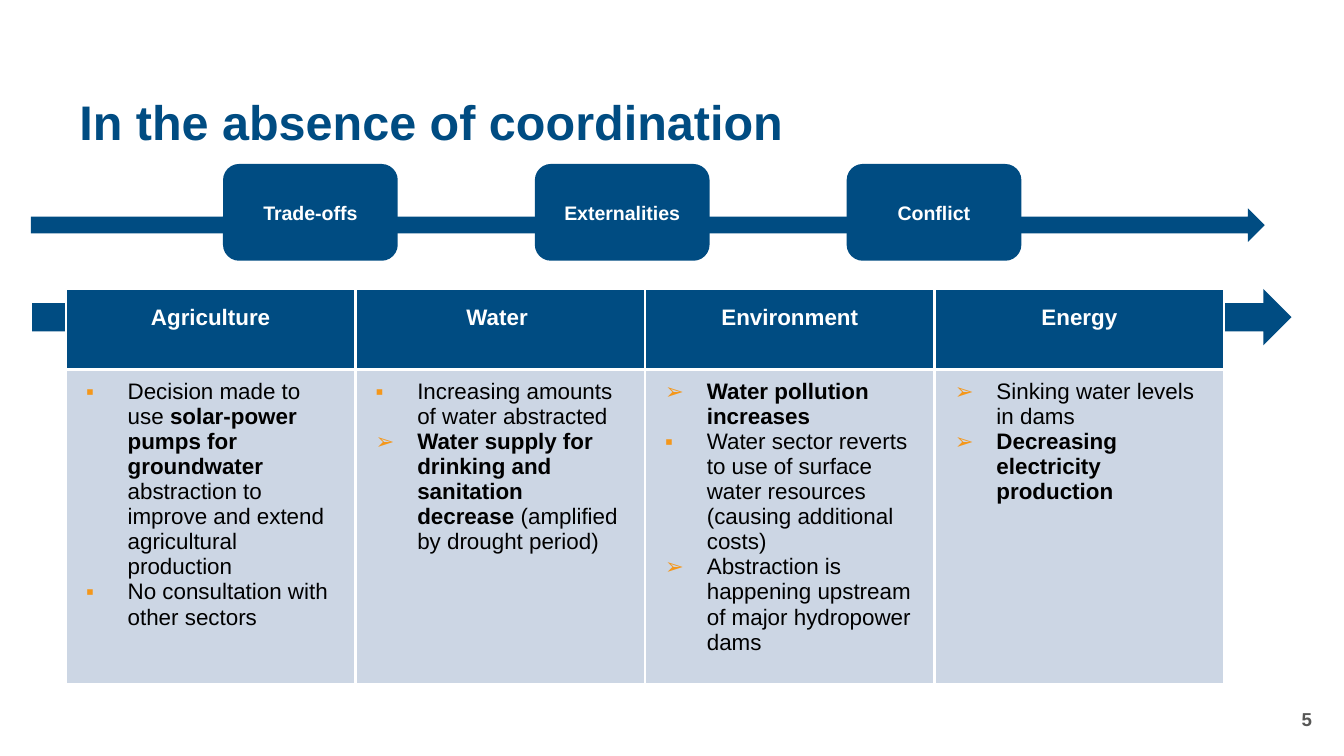
from pptx import Presentation
from pptx.dml.color import RGBColor
from pptx.enum.shapes import MSO_SHAPE
from pptx.enum.text import MSO_ANCHOR, PP_ALIGN
from pptx.oxml import parse_xml
from pptx.oxml.ns import nsdecls
from pptx.util import Inches, Pt

ARROW, ROUND = MSO_SHAPE.RIGHT_ARROW, MSO_SHAPE.ROUNDED_RECTANGLE
MIDDLE = MSO_ANCHOR.MIDDLE
LEFT, CENTER, RIGHT = PP_ALIGN.LEFT, PP_ALIGN.CENTER, PP_ALIGN.RIGHT

COLORS = {"navy": "004C82", "pale": "CCD6E4", "gold": "F4971A",
          "white": "FFFFFF", "black": "000000", "gray": "575756"}
WIDTH = 10
HEIGHT = WIDTH * 9 / 16
TABLE_X, TABLE_Y, TABLE_W = 0.49, 2.15, 8.62
ROWS = (0.6, 2.25)
STEP_X, STEP_GAP = 1.66, 2.32

STEPS = ("Trade-offs", "Externalities", "Conflict")
ARROWS = ((0.23, 1.55, 9.18, 0.25), (0.24, 2.15, 9.37, 0.42))
# Each item is a bullet and its text; ** switches bold on and off.
SECTORS = {
    "Agriculture": (
        ("▪", "Decision made to use **solar-power pumps for groundwater **"
              "abstraction to improve and extend agricultural production"),
        ("▪", "No consultation with other sectors")),
    "Water ": (
        ("▪", "Increasing amounts of water abstracted"),
        ("➢", "**Water supply for drinking and sanitation decrease **"
              "(amplified by drought period)")),
    "Environment": (
        ("➢", "**Water pollution increases**"),
        ("▪", "Water sector reverts to use of surface water resources "
              "(causing additional costs)"),
        ("➢", "Abstraction is happening upstream of major hydropower dams")),
    "Energy": (
        ("➢", "Sinking water levels in dams"),
        ("➢", "**Decreasing electricity production**")),
}


def color(name):
    return RGBColor.from_string(COLORS[name])


def style(font, size, hue, bold=True):
    for key, value in {"name": "Arial", "size": Pt(size), "bold": bold}.items():
        setattr(font, key, value)
    font.color.rgb = color(hue)


def write(frame, text, size, hue, align):
    """Fill a text frame with one bold line."""
    frame.word_wrap = True
    frame.vertical_anchor = MIDDLE
    para = frame.paragraphs[0]
    para.alignment = align
    run = para.add_run()
    run.text = text
    style(run.font, size, hue)
    return para


def add_title(slide, text):
    title = slide.shapes.title
    box = {"left": 0.49, "top": 0.63, "width": 9.37, "height": 0.59}
    for key, value in box.items():
        setattr(title, key, Inches(value))
    write(title.text_frame, text, 26, "navy", LEFT).line_spacing = 0.9


def add_block(slide, kind, *box):
    block = slide.shapes.add_shape(kind, *map(Inches, box))
    block.shadow.inherit = False
    block.fill.solid()
    block.fill.fore_color.rgb = color("navy")
    block.line.fill.background()
    return block


def add_number(slide, text):
    box = slide.shapes.add_textbox(*map(Inches, (7.61, 5.2, 2.25, 0.3)))
    write(box.text_frame, text, 10, "gray", RIGHT)


def add_bullet(para, char):
    props = para._p.get_or_add_pPr()
    props.set("marL", str(Inches(0.31)))
    props.set("indent", str(-Inches(0.31)))
    for part in (f'<a:buClr {nsdecls("a")}><a:srgbClr val="{COLORS["gold"]}"/></a:buClr>',
                 f'<a:buFont {nsdecls("a")} typeface="Arial"/>',
                 f'<a:buChar {nsdecls("a")} char="{char}"/>'):
        props.append(parse_xml(part))


def dress(cell, fill, top):
    """Set the borders, fill and margins of a cell."""
    props = cell._tc.get_or_add_tcPr()
    for side in "LRTB":
        props.append(parse_xml(
            f'<a:ln{side} {nsdecls("a")} w="{Pt(1.5)}"><a:solidFill>'
            f'<a:srgbClr val="{COLORS["white"]}"/></a:solidFill></a:ln{side}>'))
    cell.fill.solid()
    cell.fill.fore_color.rgb = color(fill)
    sizes = {"left": 0.15, "top": top, "right": 0.15, "bottom": 0.07}
    for side, value in sizes.items():
        setattr(cell, f"margin_{side}", Inches(value))


def fill_list(frame, items):
    for i, (char, text) in enumerate(items):
        para = frame.add_paragraph() if i else frame.paragraphs[0]
        add_bullet(para, char)
        para.font.size = Pt(12)
        for j, part in enumerate(text.split("**")):
            if part:
                run = para.add_run()
                run.text = part
                style(run.font, 12, "black", j % 2 == 1)


def add_sectors(slide):
    count = len(SECTORS)
    box = (TABLE_X, TABLE_Y, TABLE_W, sum(ROWS))
    table = slide.shapes.add_table(len(ROWS), count, *map(Inches, box)).table
    for row, tall in zip(table.rows, ROWS):
        row.height = Inches(tall)
    for col, (name, items) in enumerate(SECTORS.items()):
        table.columns[col].width = Inches(TABLE_W / count)
        head, body = table.cell(0, col), table.cell(1, col)
        dress(head, "navy", 0.12)
        dress(body, "pale", 0.07)
        para = head.text_frame.paragraphs[0]
        para.alignment = CENTER
        run = para.add_run()
        run.text = name
        style(run.font, 12, "white")
        fill_list(body.text_frame, items)


def main():
    deck = Presentation()
    deck.slide_width, deck.slide_height = Inches(WIDTH), Inches(HEIGHT)
    slide = deck.slides.add_slide(deck.slide_layouts[5])
    add_title(slide, "In the absence of coordination ")
    for box in ARROWS:
        add_block(slide, ARROW, *box)
    add_number(slide, "5")
    add_sectors(slide)
    for i, name in enumerate(STEPS):
        step = add_block(slide, ROUND, STEP_X + i * STEP_GAP, 1.22, 1.3, 0.72)
        write(step.text_frame, name, 10.5, "white", CENTER)
    deck.save("out.pptx")


if __name__ == "__main__":
    main()
